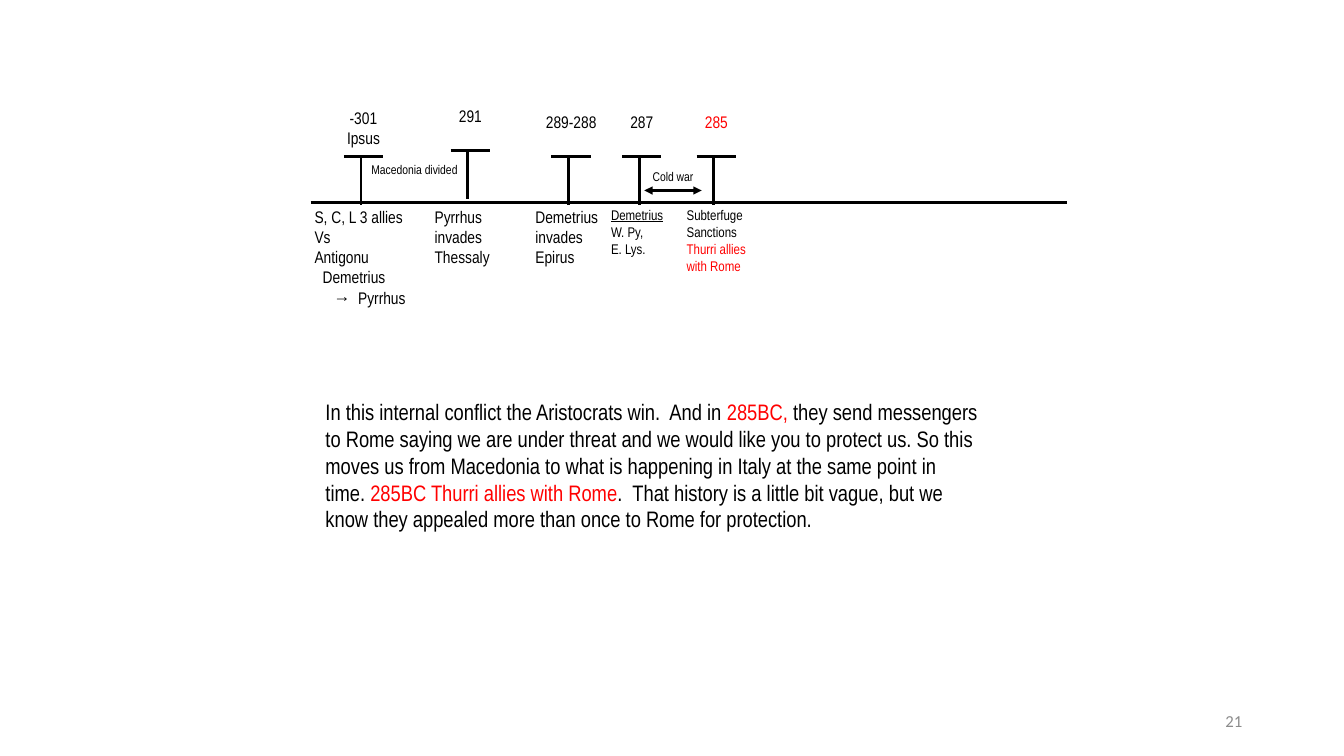
from pptx import Presentation
from pptx.dml.color import RGBColor as Rgb
from pptx.enum.shapes import MSO_CONNECTOR as Link
from pptx.enum.text import MSO_ANCHOR as Anchor, PP_ALIGN as Align
from pptx.oxml.ns import qn
from pptx.util import Inches, Pt
from lxml.etree import SubElement as Sub

BLACK, RED, GREY = "000000", "FF0000", "8C8C8C"
AXIS = 2.01


def color(code):
    """Turn a hex string into a colour."""
    return Rgb.from_string(code)


def write(slide, box, paras, size=12, hue=BLACK, face="Arial Narrow",
          align=Align.LEFT, anchor=Anchor.TOP, pad=0.04, indents=()):
    """Add a text box; a run is a string or a (string, format) pair."""
    frame = slide.shapes.add_textbox(*map(Inches, box)).text_frame
    frame.word_wrap = True
    frame.vertical_anchor = anchor
    frame.margin_left = frame.margin_right = Inches(max(pad, 0.04))
    frame.margin_top = frame.margin_bottom = Inches(min(pad, 0.05))
    for num, para in enumerate(paras):
        line = frame.add_paragraph() if num else frame.paragraphs[0]
        line.alignment = align
        if num < len(indents) and indents[num]:
            line._p.get_or_add_pPr().set("marL", str(Inches(indents[num])))
        for part in [para] if isinstance(para, str) else para:
            text, style = (part, {}) if isinstance(part, str) else part
            run = line.add_run()
            run.text = text
            run.font.size = Pt(size)
            run.font.name = face
            run.font.underline = style.get("under")
            run.font.color.rgb = color(style.get("hue", hue))


def rule(slide, start, end, arrows=False):
    """Draw a black line, with arrowheads at both ends if asked."""
    link = slide.shapes.add_connector(
        Link.STRAIGHT, *map(Inches, (*start, *end)))
    link.line.color.rgb = color(BLACK)
    link.line.width = Pt(2)
    if arrows:
        for end_tag in ("a:headEnd", "a:tailEnd"):
            Sub(link.line._ln, qn(end_tag), type="triangle")
    Sub(link._element.spPr, qn("a:effectLst"))


def mark(slide, x, date, top=1.55, rise=0.48, hue=BLACK):
    """Draw a dated T-shaped mark on the time line."""
    rule(slide, (x, top + 0.02), (x, top + 0.48))
    rule(slide, (x - 0.17, top), (x + 0.22, top))
    write(slide, (x - 0.32, top - rise, 0.69, 0.52), date,
          hue=hue, align=Align.CENTER)


def main():
    """Build the slide and save it."""
    deck = Presentation()
    deck.slide_width, deck.slide_height = Inches(13.33), Inches(7.5)
    slide = deck.slides.add_slide(deck.slide_layouts[6])
    red = {"hue": RED}

    rule(slide, (3.08, AXIS), (10.58, AXIS))
    mark(slide, 3.58, ["-301", "Ipsus"], rise=0.52)
    mark(slide, 4.64, ["291"], top=1.49)
    mark(slide, 5.64, ["289-288"])
    mark(slide, 6.34, ["287"])
    mark(slide, 7.08, ["285"], hue=RED)

    events = [
        (3.08, 1.06, 1.06, 12, ["S, C, L 3 allies", "Vs", "Antigonu",
                                "Demetrius", "→  Pyrrhus"]),
        (4.27, 0.81, 0.75, 12, ["Pyrrhus invades Thessaly"]),
        (5.27, 0.75, 0.75, 12, ["Demetrius invades Epirus"]),
        (6.02, 0.62, 0.75, 10, [[("Demetrius", {"under": True})],
                                "W. Py,", "E. Lys."]),
        (6.77, 0.75, 1.12, 10, ["Subterfuge", "Sanctions",
                                [("Thurri allies with Rome", red)]]),
    ]
    for x, wide, high, size, paras in events:
        indents = (0, 0, 0, 0.08, 0.19) if len(paras) == 5 else ()
        write(slide, (x, AXIS, wide, high), paras, size, indents=indents)

    write(slide, (3.64, 1.57, 0.94, 0.39), ["Macedonia divided"], 9,
          align=Align.CENTER)
    write(slide, (6.33, 1.64, 0.69, 0.39), ["Cold war"], 9,
          align=Align.CENTER)
    rule(slide, (6.39, 1.89), (6.96, 1.89), arrows=True)

    story = [
        "In this internal conflict the Aristocrats win.  And in ",
        ("285BC,", red),
        " they send messengers to Rome saying we are under threat and we "
        "would like you to protect us. So this moves us from Macedonia to "
        "what is happening in Italy at the same point in time. ",
        ("285BC Thurri allies with Rome", red),
        ".  That history is a little bit vague, but we know they appealed "
        "more than once to Rome for protection.",
    ]
    write(slide, (3.13, 3.9, 6.67, 1.65), [story], 16, pad=0.1)
    write(slide, (9.42, 6.95, 3, 0.4), ["21"], hue=GREY, face="Calibri",
          align=Align.RIGHT, anchor=Anchor.MIDDLE, pad=0.1)
    deck.save("out.pptx")


if __name__ == "__main__":
    main()
